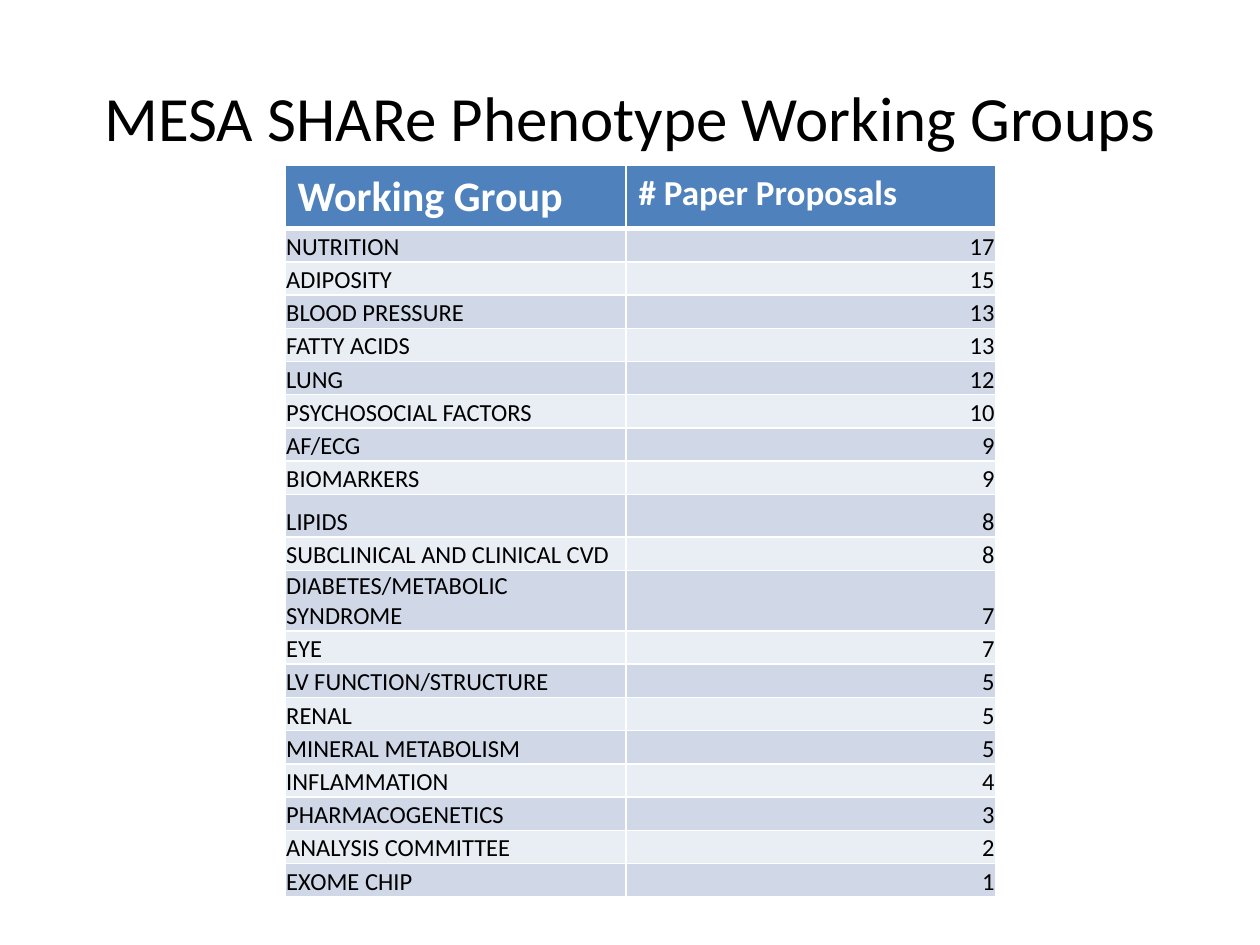
from dataclasses import dataclass

from lxml.etree import SubElement
from pptx import Presentation
from pptx.dml.color import RGBColor
from pptx.enum.text import MSO_ANCHOR as Anchor, PP_ALIGN as Align
from pptx.oxml.ns import qn
from pptx.util import Cm, Pt


@dataclass(frozen=True)
class Theme:
    font: str = "Calibri"
    black: str = "000000"
    white: str = "FFFFFF"
    header: str = "4F81BD"
    bands: tuple = ("D0D8E8", "E9EDF4")
    title_size: int = 36
    header_sizes: tuple = (24, 20)
    body_size: int = 14


THEME = Theme()

TITLE = "MESA SHARe Phenotype Working Groups"
HEADINGS = ("Working Group", "# Paper Proposals")
PROPOSALS = (
    ("NUTRITION", 17),
    ("ADIPOSITY", 15),
    ("BLOOD PRESSURE", 13),
    ("FATTY ACIDS", 13),
    ("LUNG", 12),
    ("PSYCHOSOCIAL FACTORS", 10),
    ("AF/ECG", 9),
    ("BIOMARKERS", 9),
    ("LIPIDS", 8),
    ("SUBCLINICAL AND CLINICAL CVD", 8),
    ("DIABETES/METABOLIC SYNDROME", 7),
    ("EYE", 7),
    ("LV FUNCTION/STRUCTURE", 5),
    ("RENAL", 5),
    ("MINERAL METABOLISM", 5),
    ("INFLAMMATION", 4),
    ("PHARMACOGENETICS", 3),
    ("ANALYSIS COMMITTEE", 2),
    ("EXOME CHIP", 1),
)

# Lengths in centimetres
HEADER_HEIGHT, ROW_HEIGHT = 1.27, 0.67
TALL_ROWS = {"LIPIDS": 0.86, "DIABETES/METABOLIC SYNDROME": 1.22}
GROUP_SHARE = 0.48

HEADER_CELL = dict(margin_left=Cm(0.25), margin_right=Cm(0.25),
                   margin_top=Cm(0.13), margin_bottom=Cm(0.13),
                   vertical_anchor=Anchor.TOP)
BODY_CELL = dict(margin_left=Cm(0.02), margin_right=Cm(0.02),
                 margin_top=Cm(0.02), margin_bottom=0,
                 vertical_anchor=Anchor.BOTTOM)


def apply_format(target, values):
    for name, value in values.items():
        setattr(target, name, value)


def write_text(text_frame, text, size, color, bold=False, align=Align.LEFT):
    paragraph = text_frame.paragraphs[0]
    paragraph.alignment = align
    run = paragraph.add_run()
    run.text = text
    apply_format(run.font, dict(name=THEME.font, size=Pt(size), bold=bold))
    run.font.color.rgb = RGBColor.from_string(color)


def set_borders(cell, widths):
    properties = cell._tc.get_or_add_tcPr()
    for side, width in zip("LRTB", widths):
        line = SubElement(properties, qn(f"a:ln{side}"), w=str(Pt(width)))
        fill = SubElement(line, qn("a:solidFill"))
        SubElement(fill, qn("a:srgbClr"), val=THEME.white)


def style_cell(cell, values, fill, borders):
    apply_format(cell, values)
    set_borders(cell, borders)
    cell.fill.solid()
    cell.fill.fore_color.rgb = RGBColor.from_string(fill)


def add_title(slide, left, top, width, height):
    text_frame = slide.shapes.add_textbox(
        Cm(left), Cm(top), Cm(width), Cm(height)).text_frame
    apply_format(text_frame, dict(word_wrap=True, vertical_anchor=Anchor.MIDDLE))
    write_text(text_frame, TITLE, THEME.title_size, THEME.black, align=Align.CENTER)


def add_proposal_table(slide, left, top, width):
    heights = [HEADER_HEIGHT] + [TALL_ROWS.get(group, ROW_HEIGHT)
                                 for group, _ in PROPOSALS]
    table = slide.shapes.add_table(
        len(heights), len(HEADINGS),
        Cm(left), Cm(top), Cm(width), Cm(sum(heights))).table
    for column, share in zip(table.columns, (GROUP_SHARE, 1 - GROUP_SHARE)):
        column.width = Cm(width * share)
    for row, height in zip(table.rows, heights):
        row.height = Cm(height)

    # Header row, with a heavier rule below it
    for column, (heading, size) in enumerate(zip(HEADINGS, THEME.header_sizes)):
        cell = table.cell(0, column)
        style_cell(cell, HEADER_CELL, THEME.header, (1, 1, 1, 3))
        write_text(cell.text_frame, heading, size, THEME.white, bold=True)

    # Banded body rows: group names left, counts right
    for index, record in enumerate(PROPOSALS):
        fill = THEME.bands[index % 2]
        borders = (1, 1, 1 if index else 3, 1)
        for column, (value, align) in enumerate(zip(record, (Align.LEFT, Align.RIGHT))):
            cell = table.cell(index + 1, column)
            style_cell(cell, BODY_CELL, fill, borders)
            write_text(cell.text_frame, str(value), THEME.body_size,
                       THEME.black, align=align)


def main():
    presentation = Presentation()
    apply_format(presentation, dict(slide_width=Cm(25.4), slide_height=Cm(19.05)))
    slide = presentation.slides.add_slide(presentation.slide_layouts[6])
    add_title(slide, 1.27, 0.76, 22.86, 3.18)
    add_proposal_table(slide, 5.75, 3.33, 14.32)
    presentation.save("out.pptx")


if __name__ == "__main__":
    main()
